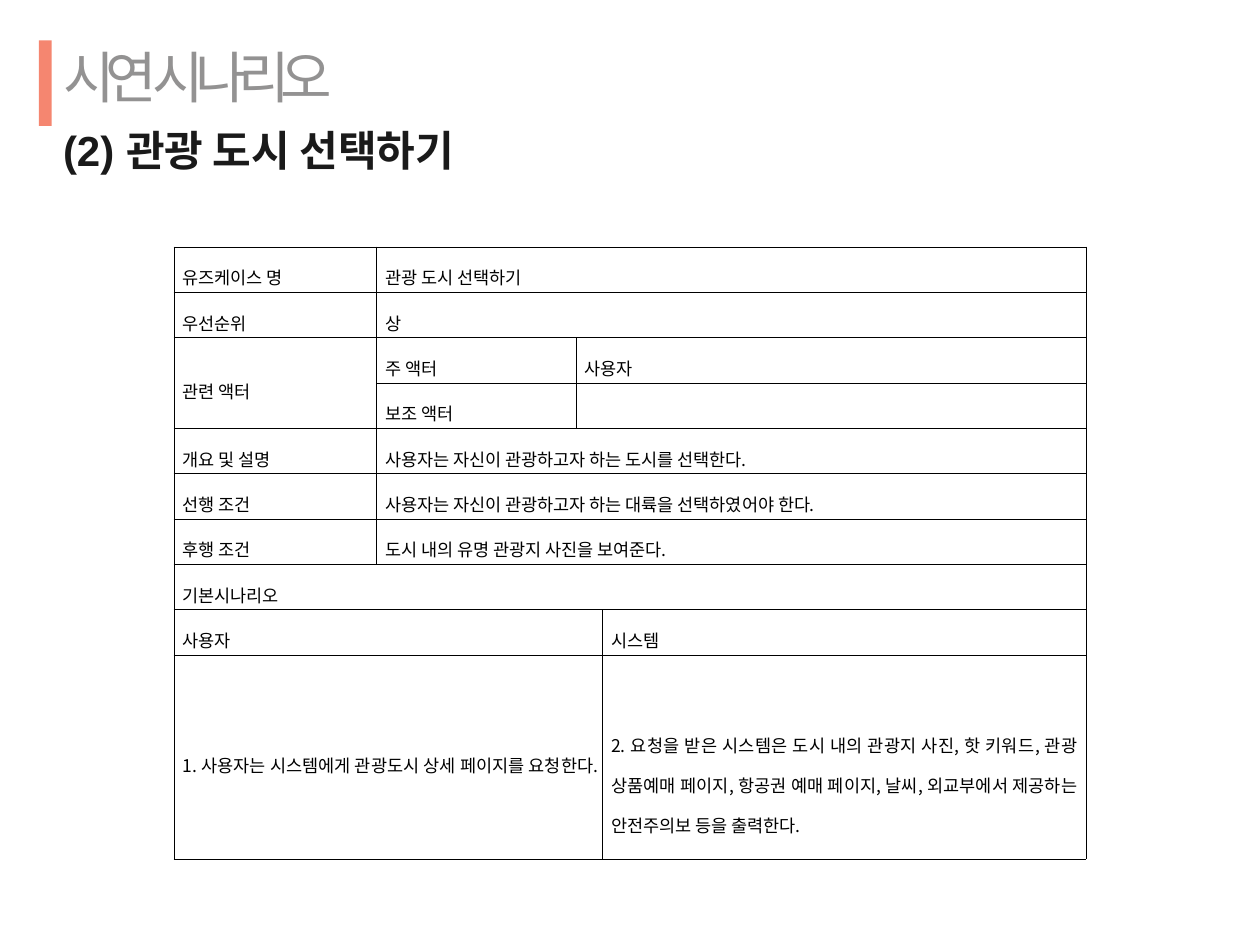
from lxml.etree import SubElement
from pptx import Presentation
from pptx.dml.color import RGBColor
from pptx.enum.shapes import MSO_SHAPE
from pptx.enum.text import MSO_ANCHOR, MSO_AUTO_SIZE, PP_ALIGN
from pptx.oxml.ns import qn
from pptx.util import Inches, Pt

CORAL = RGBColor(0xF5, 0x86, 0x70)
GRAY = RGBColor(0x93, 0x92, 0x92)
INK = RGBColor(0x1A, 0x1A, 0x1A)
BLACK = RGBColor(0, 0, 0)
TABLE_FONT = "Noto Sans CJK KR"

COLUMN_WIDTHS = [1.61, 1.58, 0.21, 3.84]
ROW_HEIGHTS = [0.36] * 9 + [1.62]
USE_CASE = [
    (0, 0, 1, 1, "유즈케이스 명"),
    (0, 1, 1, 3, "관광 도시 선택하기"),
    (1, 0, 1, 1, "우선순위"),
    (1, 1, 1, 3, "상"),
    (2, 0, 2, 1, "관련 액터"),
    (2, 1, 1, 1, "주 액터"),
    (2, 2, 1, 2, "사용자"),
    (3, 1, 1, 1, "보조 액터"),
    (3, 2, 1, 2, ""),
    (4, 0, 1, 1, "개요 및 설명"),
    (4, 1, 1, 3, "사용자는 자신이 관광하고자 하는 도시를 선택한다."),
    (5, 0, 1, 1, "선행 조건"),
    (5, 1, 1, 3, "사용자는 자신이 관광하고자 하는 대륙을 선택하였어야 한다."),
    (6, 0, 1, 1, "후행 조건"),
    (6, 1, 1, 3, "도시 내의 유명 관광지 사진을 보여준다."),
    (7, 0, 1, 4, "기본시나리오"),
    (8, 0, 1, 3, "사용자"),
    (8, 3, 1, 1, "시스템"),
    (9, 0, 1, 3, "1. 사용자는 시스템에게 관광도시 상세 페이지를 요청한다."),
    (9, 3, 1, 1, "2. 요청을 받은 시스템은 도시 내의 관광지 사진, 핫 키워드, "
                 "관광 상품예매 페이지, 항공권 예매 페이지, 날씨, "
                 "외교부에서 제공하는 안전주의보 등을 출력한다."),
]


def add_accent_bar(slide):
    bar = slide.shapes.add_shape(
        MSO_SHAPE.RECTANGLE, Inches(0.31), Inches(0.32), Inches(0.1), Inches(0.68))
    bar.shadow.inherit = False
    bar.fill.solid()
    bar.fill.fore_color.rgb = CORAL
    bar.line.fill.background()


def format_heading(paragraph, size, color, bold, tracking):
    paragraph.alignment = PP_ALIGN.LEFT
    paragraph.line_spacing = Pt(37)
    for run in paragraph.runs:
        run.font.name = "Arial"
        run.font.size = Pt(size)
        run.font.bold = bold
        run.font.color.rgb = color
        run.font._element.set("spc", str(tracking * 100))


def set_title(slide):
    title = slide.shapes.title
    title.left, title.top = Inches(0.5), Inches(0.36)
    title.width, title.height = Inches(6.56), Inches(1.56)
    frame = title.text_frame
    frame.text = "시연 시나리오\n(2) 관광 도시 선택하기"
    frame.auto_size = MSO_AUTO_SIZE.NONE
    frame.vertical_anchor = MSO_ANCHOR.TOP
    frame.margin_left = frame.margin_right = 0
    frame.margin_top = frame.margin_bottom = 0
    section, use_case = frame.paragraphs
    format_heading(section, 32, GRAY, False, -5)
    format_heading(use_case, 24, INK, True, 0)


def set_borders(cell):
    properties = cell._tc.get_or_add_tcPr()
    for side in ("lnL", "lnR", "lnT", "lnB"):
        border = SubElement(properties, qn(f"a:{side}"), w=str(Pt(0.28)))
        fill = SubElement(border, qn("a:solidFill"))
        SubElement(fill, qn("a:srgbClr"), val=str(BLACK))


def format_cell(cell):
    set_borders(cell)
    cell.fill.background()
    cell.vertical_anchor = MSO_ANCHOR.MIDDLE
    cell.margin_left = cell.margin_right = Inches(0.07)
    cell.margin_top = cell.margin_bottom = Inches(0.02)
    paragraph = cell.text_frame.paragraphs[0]
    paragraph.alignment = PP_ALIGN.JUSTIFY
    paragraph.line_spacing = 1.6
    paragraph.font.size = Pt(10)
    for run in paragraph.runs:
        run.font.name = TABLE_FONT
        run.font.size = Pt(10)
        run.font.color.rgb = BLACK
        SubElement(run.font._element, qn("a:ea"), typeface=TABLE_FONT)


def add_use_case_table(slide):
    table = slide.shapes.add_table(
        len(ROW_HEIGHTS), len(COLUMN_WIDTHS), Inches(1.38), Inches(1.96),
        Inches(sum(COLUMN_WIDTHS)), Inches(sum(ROW_HEIGHTS))).table
    table.first_row = table.horz_banding = False
    for column, width in zip(table.columns, COLUMN_WIDTHS):
        column.width = Inches(width)
    for row, height in zip(table.rows, ROW_HEIGHTS):
        row.height = Inches(height)
    for row, column, row_span, column_span, wording in USE_CASE:
        cell = table.cell(row, column)
        cell.text_frame.text = wording
        if row_span * column_span > 1:
            cell.merge(table.cell(row + row_span - 1, column + column_span - 1))
    for cell in table.iter_cells():
        format_cell(cell)
    table.cell(9, 3).margin_top = Inches(0.34)


def main():
    presentation = Presentation()
    presentation.slide_width, presentation.slide_height = Inches(10), Inches(7.5)
    slide = presentation.slides.add_slide(presentation.slide_layouts[5])
    add_accent_bar(slide)
    set_title(slide)
    add_use_case_table(slide)
    presentation.save("out.pptx")


if __name__ == "__main__":
    main()
